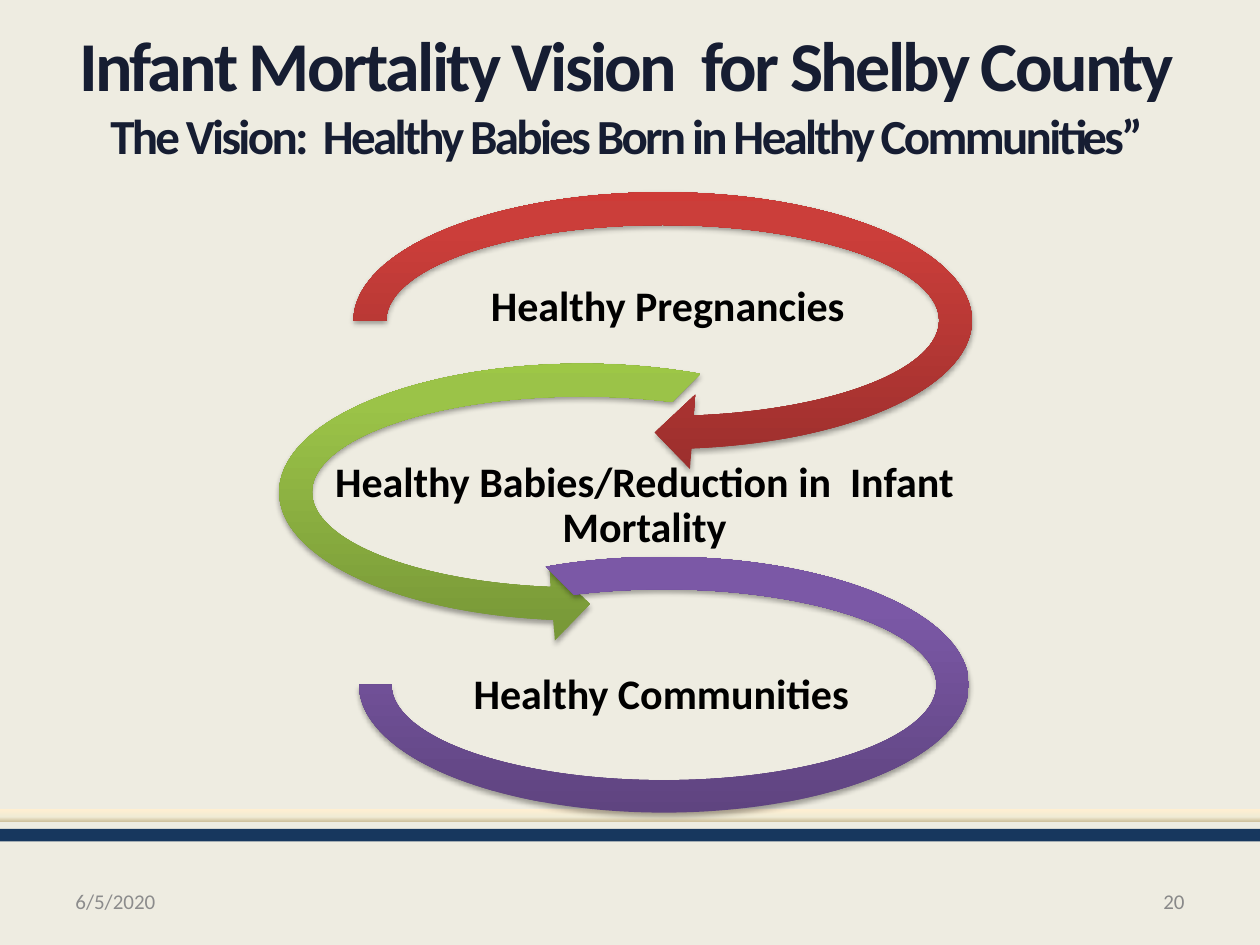
from dataclasses import dataclass

import pptx
import pptx.dml.color
import pptx.enum.shapes
import pptx.enum.text
import pptx.oxml.ns
import pptx.util
from lxml import etree

Pt = pptx.util.Pt
qn = pptx.oxml.ns.qn
Shape = pptx.enum.shapes.MSO_SHAPE
Align = pptx.enum.text.PP_ALIGN
Anchor = pptx.enum.text.MSO_ANCHOR


@dataclass(frozen=True)
class Theme:
    font: str = "Calibri"
    background: str = "EEECE1"
    title: str = "161D32"
    label: str = "000000"
    date: str = "8C8C8C"
    number: str = "898989"
    navy: str = "17375E"
    cream: tuple = ((0, "FFEFD1"), (65, "F0EBD5"), (100, "D1C39F"))
    red: tuple = ((0, "9C2F2D"), (80, "CB3E3A"), (100, "CE3B37"))
    green: tuple = ((0, "779737"), (80, "9BC348"), (100, "9DC746"))
    purple: tuple = ((0, "5F4480"), (80, "7B58A6"), (100, "7C57A8"))
    title_size: int = 40
    subtitle_size: int = 28
    label_size: int = 24
    footer_size: int = 12


@dataclass(frozen=True)
class Box:
    left: float
    top: float
    width: float
    height: float

    def inside(self, left, top, width, height):
        return Box(self.left + left, self.top + top, width, height)

    def lengths(self):
        return [Pt(value) for value in (self.left, self.top, self.width, self.height)]


THEME = Theme()


def rgb(color):
    return pptx.dml.color.RGBColor.from_string(color)


def format_font(font, size, color, bold=False):
    font.name = THEME.font
    font.size = Pt(size)
    font.bold = bold
    font.color.rgb = rgb(color)


def add_plain_shape(page, kind, box):
    shape = page.shapes.add_shape(kind, *box.lengths())
    shape.shadow.inherit = False
    shape.line.fill.background()
    return shape


def fill_gradient(shape, stops, angle):
    """Fill with (percent, colour) stops; the angle runs counter-clockwise."""
    shape.fill.gradient()
    shape.fill.gradient_angle = angle
    stop_list = shape.element.spPr.find(qn("a:gradFill")).find(qn("a:gsLst"))
    for old_stop in list(stop_list):
        stop_list.remove(old_stop)
    for percent, color in stops:
        stop = etree.SubElement(stop_list, qn("a:gs"), pos=str(percent * 1000))
        etree.SubElement(stop, qn("a:srgbClr"), val=color)


def add_soft_shadow(shape):
    effects = shape.element.spPr.find(qn("a:effectLst"))
    shadow = etree.SubElement(
        effects, qn("a:outerShdw"), blurRad=str(Pt(3.1)), dist=str(Pt(1.8)),
        dir="5400000", rotWithShape="0")
    color = etree.SubElement(shadow, qn("a:srgbClr"), val="000000")
    etree.SubElement(color, qn("a:alpha"), val="35000")


def add_text(page, box, text, size, color, align, bold=False):
    frame = page.shapes.add_textbox(*box.lengths()).text_frame
    frame.word_wrap = True
    frame.vertical_anchor = Anchor.MIDDLE
    frame.text = text
    para = frame.paragraphs[0]
    para.alignment = align
    format_font(para.runs[0].font, size, color, bold)
    return frame


def place_bands(page, box):
    cream = add_plain_shape(page, Shape.RECTANGLE, box.inside(0, 0, box.width, 7.2))
    fill_gradient(cream, THEME.cream, 270)
    navy = add_plain_shape(page, Shape.RECTANGLE, box.inside(0, 11.5, box.width, 7.2))
    navy.fill.solid()
    navy.fill.fore_color.rgb = rgb(THEME.navy)


def place_title(page, box):
    title = page.shapes.title
    title.left, title.top, title.width, title.height = box.lengths()
    frame = title.text_frame
    frame.word_wrap = True
    frame.vertical_anchor = Anchor.MIDDLE
    frame.text = ("Infant Mortality Vision  for Shelby County\v"
                  "The Vision:  Healthy Babies Born in Healthy Communities”")
    para = frame.paragraphs[0]
    para.alignment = Align.CENTER
    for span, size in zip(para.runs, (THEME.title_size, THEME.subtitle_size)):
        format_font(span.font, size, THEME.title, bold=True)
        span.font._element.set("spc", "-150")


def place_footer(page, box):
    width = 168
    add_text(page, box.inside(0, 0, width, box.height), "6/5/2020",
             THEME.footer_size, THEME.date, Align.LEFT)
    add_text(page, box.inside(box.width - width, 0, width, box.height), "20",
             THEME.footer_size, THEME.number, Align.RIGHT)


def place_step(page, kind, adjustments, stops, arc_box, label_box, label):
    arc = add_plain_shape(page, kind, arc_box)
    for index, value in enumerate(adjustments):
        arc.adjustments[index] = value
    fill_gradient(arc, stops, 90)
    add_soft_shadow(arc)

    frame = add_text(page, label_box, label, THEME.label_size, THEME.label,
                     Align.CENTER, bold=True)
    frame.margin_left = frame.margin_right = Pt(1.5)
    frame.margin_top = frame.margin_bottom = Pt(1.5)
    frame.paragraphs[0].line_spacing = 0.9


def place_vision_cycle(page, box):
    label_height = 47.5
    steps = [
        (Shape.CIRCULAR_ARROW, (0.11, 11.42, 45, 108, 0.125), THEME.red,
         (42.5, 0, 377.3, 170.6), (126, 54, 216), "Healthy Pregnancies"),
        (Shape.LEFT_CIRCULAR_ARROW, (0.11, 11.42, 63, 189, 0.125), THEME.green,
         (0, 98, 370, 170.6), (36, 167.8, 369.4),
         "Healthy Babies/Reduction in  Infant Mortality"),
        (Shape.BLOCK_ARC, (135, 108, 0.127), THEME.purple,
         (57.6, 220.3, 348.5, 146.2), (102.2, 275.8, 256.3), "Healthy Communities"),
    ]
    for kind, adjustments, stops, arc, label_place, label in steps:
        place_step(page, kind, adjustments, stops, box.inside(*arc),
                   box.inside(*label_place, label_height), label)


def main():
    deck = pptx.Presentation()
    deck.slide_width, deck.slide_height = Pt(720), Pt(540)
    page = deck.slides.add_slide(deck.slide_layouts[5])
    page.background.fill.solid()
    page.background.fill.fore_color.rgb = rgb(THEME.background)

    place_bands(page, Box(0, 462.2, 720, 18.7))
    place_title(page, Box(34, 8, 648, 90))
    place_footer(page, Box(36, 500.5, 648, 28.8))
    place_vision_cycle(page, Box(147.6, 97.9, 420, 366.5))
    deck.save("out.pptx")


if __name__ == "__main__":
    main()
